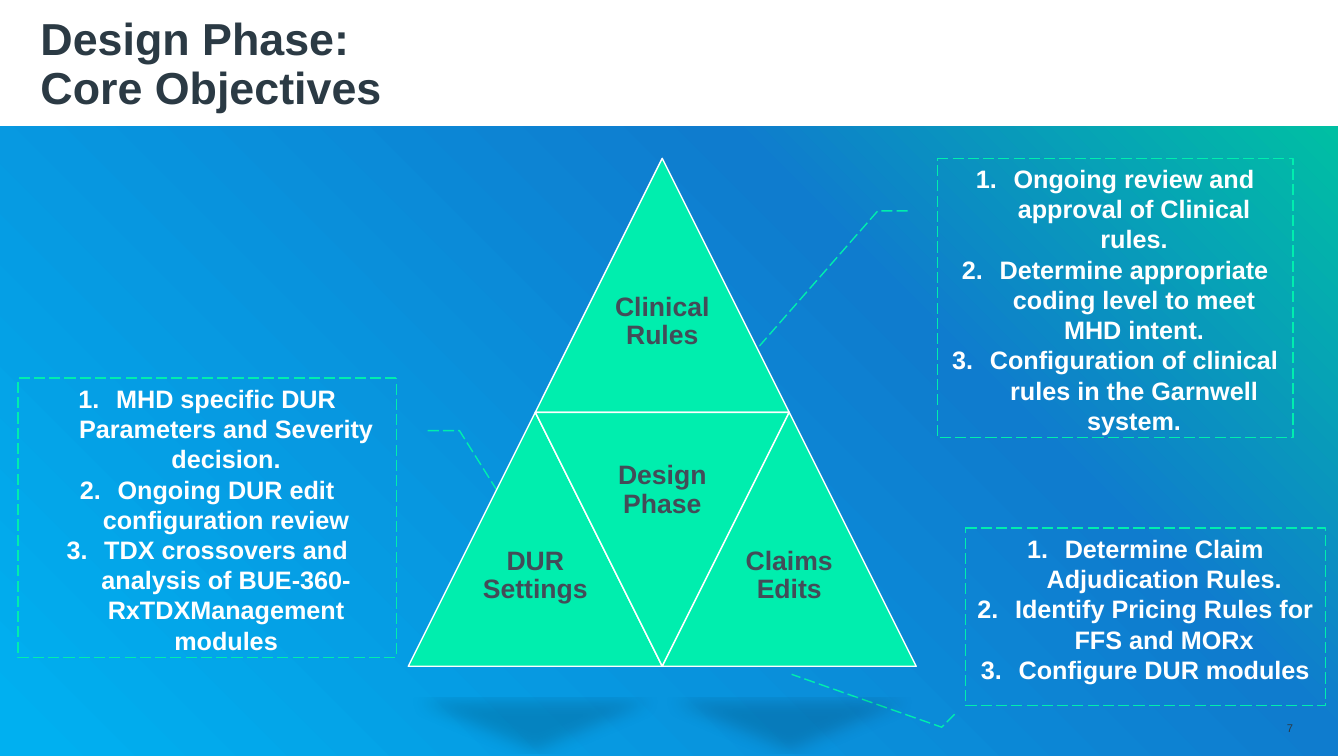
"""Build the slide on the core objectives of the design phase."""
from lxml.etree import SubElement
from pptx import Presentation
from pptx.dml.color import RGBColor
from pptx.enum.dml import MSO_LINE
from pptx.enum.shapes import MSO_SHAPE
from pptx.enum.text import MSO_ANCHOR, MSO_AUTO_SIZE, PP_ALIGN
from pptx.oxml import parse_xml
from pptx.oxml.ns import nsdecls, qn
from pptx.util import Cm, Pt

COLORS = {"ink": "2B3A44", "label": "434C58", "mint": "00EEAE", "white": "FFFFFF"}
BACKDROP_STOPS = [(2, "00B0F0"), (69, "0F7CCE"), (100, "00BFA3")]
TITLE = "Design Phase:\vCore Objectives"
PAGE = "7"

CALLOUTS = [
    {"box": (23.62, 3.99, 8.97, 7.04), "mirrored": False,
     "leader": (0.188, -0.083, 0.188, -0.167, 0.754, -0.556),
     "steps": ["Ongoing review and approval of Clinical rules.",
               "Determine appropriate coding level to meet MHD intent.",
               "Configuration of clinical rules in the Garnwell system."]},
    {"box": (0.46, 9.53, 9.53, 7.04), "mirrored": True,
     "leader": (0.188, -0.083, 0.188, -0.167, 0.494, -0.309),
     "steps": ["MHD specific DUR Parameters and Severity decision.",
               "Ongoing DUR edit configuration review",
               "TDX crossovers and analysis of BUE-360-RxTDXManagement modules"]},
    {"box": (24.33, 13.31, 9.07, 4.47), "mirrored": False,
     "leader": (1.049, -0.03, 1.122, -0.066, 0.824, -0.483),
     "steps": ["Determine Claim Adjudication Rules.",
               "Identify Pricing Rules for FFS and MORx",
               "Configure DUR modules"]},
]

PYRAMID_LEFT, PYRAMID_TOP, SIDE = 10.29, 3.99, 6.4
HALF = SIDE / 2
INVERTED_LABEL_DROP = 1.04
TRIANGLES = [
    ("Clinical Rules", 1, 0, False),
    ("DUR Settings", 0, 1, False),
    ("Design Phase", 1, 1, True),
    ("Claims Edits", 2, 1, False),
]


def place(*lengths):
    return [Cm(length) for length in lengths]


def color(name):
    return RGBColor.from_string(COLORS[name])


def style(paragraph, size, tint, bold=True, align=PP_ALIGN.CENTER, spacing=None):
    paragraph.alignment = align
    paragraph.line_spacing = spacing
    for run in paragraph.runs:
        run.font.name = "Arial"
        run.font.size = Pt(size)
        run.font.bold = bold
        run.font.color.rgb = color(tint)


def set_margins(frame, margin):
    frame.margin_left = frame.margin_right = Cm(margin)
    frame.margin_top = frame.margin_bottom = Cm(margin)
    frame.word_wrap = True


def add_backdrop(slide):
    backdrop = slide.shapes.add_shape(MSO_SHAPE.RECTANGLE, *place(-0.15, 3.2, 33.87, 15.85))
    backdrop.shadow.inherit = False
    backdrop.line.fill.background()
    backdrop.fill.gradient()
    backdrop.fill.gradient_angle = 45
    stops = backdrop.element.spPr.find(qn("a:gradFill")).find(qn("a:gsLst"))
    for stop in list(stops):
        stops.remove(stop)
    for position, tint in BACKDROP_STOPS:
        stop = SubElement(stops, qn("a:gs"), pos=str(position * 1000))
        SubElement(stop, qn("a:srgbClr"), val=tint)


def add_title(slide):
    title = slide.shapes.title
    title.left, title.top, title.width, title.height = place(1.02, 0.38, 30.71, 2.54)
    frame = title.text_frame
    frame.text = TITLE
    frame.auto_size = MSO_AUTO_SIZE.NONE
    frame.vertical_anchor = MSO_ANCHOR.MIDDLE
    set_margins(frame, 0)
    style(frame.paragraphs[0], 32, "ink", align=PP_ALIGN.LEFT, spacing=0.9)


def add_callout(slide, box, mirrored, leader, steps):
    callout = slide.shapes.add_shape(MSO_SHAPE.LINE_CALLOUT_2, *place(*box))
    for index, value in enumerate(leader):
        callout.adjustments[index] = value
    if mirrored:
        callout.element.spPr.find(qn("a:xfrm")).set("flipH", "1")
    callout.shadow.inherit = False
    callout.fill.background()
    callout.line.color.rgb = color("mint")
    callout.line.width = Pt(1)
    callout.line.dash_style = MSO_LINE.LONG_DASH
    frame = callout.text_frame
    frame.word_wrap = True
    frame.vertical_anchor = MSO_ANCHOR.TOP
    frame.text = "\n".join(steps)
    for paragraph in frame.paragraphs:
        properties = paragraph._p.get_or_add_pPr()
        properties.set("marL", str(Cm(0.95)))
        properties.set("indent", str(-Cm(0.95)))
        SubElement(properties, qn("a:buFont"), typeface="+mj-lt")
        SubElement(properties, qn("a:buAutoNum"), type="arabicPeriod")
        style(paragraph, 18, "white")


def add_page_number(slide):
    number = slide.shapes.add_textbox(*place(31.7, 17.78, 0.89, 0.51))
    number.text_frame.text = PAGE
    set_margins(number.text_frame, 0)
    style(number.text_frame.paragraphs[0], 8, "ink", False, PP_ALIGN.RIGHT, Pt(21))


def add_triangle(pyramid, label, column, row, inverted):
    left, top = PYRAMID_LEFT + column * HALF, PYRAMID_TOP + row * SIDE
    triangle = pyramid.shapes.add_shape(
        MSO_SHAPE.ISOSCELES_TRIANGLE, *place(left, top, SIDE, SIDE))
    triangle.rotation = 180 if inverted else 0
    triangle.fill.solid()
    triangle.fill.fore_color.rgb = color("mint")
    triangle.line.color.rgb = color("white")
    triangle.line.width = Pt(1)
    triangle.shadow.inherit = False
    triangle.element.spPr.find(qn("a:effectLst")).append(parse_xml(
        f'<a:outerShdw {nsdecls("a")} blurRad="152400" dist="317500" dir="5400000" '
        'sx="90000" sy="-19000" rotWithShape="0"><a:srgbClr val="000000">'
        '<a:alpha val="15000"/></a:srgbClr></a:outerShdw>'))

    label_top = top + (INVERTED_LABEL_DROP if inverted else HALF)
    caption = pyramid.shapes.add_textbox(*place(left + HALF / 2, label_top, HALF, HALF))
    caption.text_frame.text = label
    set_margins(caption.text_frame, 0.2)
    style(caption.text_frame.paragraphs[0], 19, "label", spacing=0.9)


def main():
    deck = Presentation()
    deck.slide_width, deck.slide_height = place(33.87, 19.05)
    slide = deck.slides.add_slide(deck.slide_layouts[5])
    add_backdrop(slide)
    add_title(slide)
    for callout in CALLOUTS:
        add_callout(slide, **callout)
    add_page_number(slide)
    pyramid = slide.shapes.add_group_shape()
    for triangle in TRIANGLES:
        add_triangle(pyramid, *triangle)
    deck.save("out.pptx")


if __name__ == "__main__":
    main()
